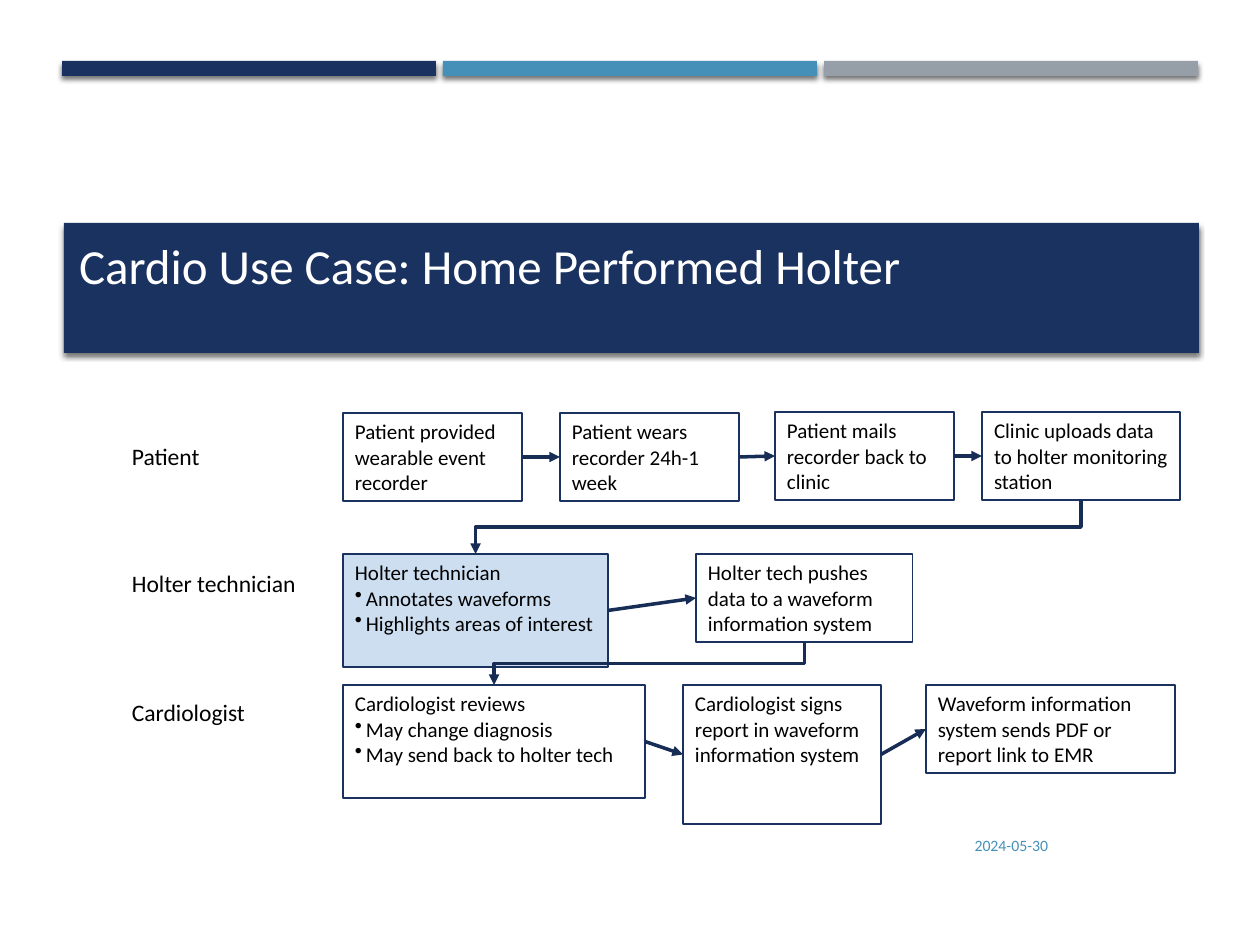
"""Build the home Holter workflow slide."""
from itertools import pairwise
from lxml.etree import SubElement
from pptx import Presentation
from pptx.dml.color import RGBColor
from pptx.enum.shapes import MSO_CONNECTOR, MSO_SHAPE
from pptx.enum.text import MSO_ANCHOR, PP_ALIGN
from pptx.oxml.ns import qn
from pptx.util import Emu, Pt

HUES = {"navy": "1A3260", "blue": "4590B8", "gray": "969FA7", "pale": "CCDEF0",
        "arrow": "172D56", "black": "000000", "white": "FFFFFF"}
BARS = ["navy", "blue", "gray"]
TITLE = "Cardio Use Case: Home Performed Holter"
DATE = "2024-05-30"
ROWS = [
    ("Patient", (120, 436, 98, 40), [
        ((343, 413, 179, 88), None, ["Patient provided wearable event recorder"]),
        ((560, 413, 179, 88), None, ["Patient wears recorder 24h-1 week"]),
        ((775, 412, 179, 88), None, ["Patient mails recorder back to clinic"]),
        ((982, 412, 198, 88), None, ["Clinic uploads data to holter monitoring station"]),
    ]),
    ("Holter technician", (120, 563, 199, 40), [
        ((343, 554, 265, 113), "pale",
         ["Holter technician", "Annotates waveforms", "Highlights areas of interest"]),
        ((696, 554, 217, 88), None, ["Holter tech pushes data to a waveform information system"]),
    ]),
    ("Cardiologist", (120, 692, 149, 40), [
        ((343, 685, 302, 113), None,
         ["Cardiologist reviews", "May change diagnosis", "May send back to holter tech"]),
        ((683, 685, 198, 139), None, ["Cardiologist signs report in waveform information system"]),
        ((926, 685, 249, 88), None, ["Waveform information system sends PDF or report link to EMR"]),
    ]),
]
PAD = {"margin_left": 12, "margin_right": 12, "margin_top": 6, "margin_bottom": 6}
BARE = dict.fromkeys(PAD, 0)


def px(n):
    return Emu(round(n * 914400 / 126))


def hue(name):
    return RGBColor.from_string(HUES[name])


def put(obj, vals):
    for key, val in vals.items():
        setattr(obj, key, val)


def write(shape, lines, size, tint="black", pad=PAD, wrap=True,
          anchor=MSO_ANCHOR.TOP, align=PP_ALIGN.LEFT):
    frame = shape.text_frame
    put(frame, {key: px(val) for key, val in pad.items()})
    put(frame, {"word_wrap": wrap, "vertical_anchor": anchor})
    for i, line in enumerate(lines):
        para = frame.add_paragraph() if i else frame.paragraphs[0]
        para.text = line
        para.alignment = align
        if i:
            props = para._p.get_or_add_pPr()
            props.set("marL", str(px(11)))
            props.set("indent", str(px(-11)))
            SubElement(props, qn("a:buChar"), char="•")
        font = para.runs[0].font
        put(font, {"name": "Calibri", "size": Pt(size)})
        font.color.rgb = hue(tint)


def text(area, line, size, **form):
    write(slide.shapes.add_textbox(*map(px, area)), [line], size, **form)


def rect(area, fill=None):
    shape = slide.shapes.add_shape(MSO_SHAPE.RECTANGLE, *map(px, area))
    shape.shadow.inherit = False
    if fill:
        shape.fill.solid()
        shape.fill.fore_color.rgb = hue(fill)
    else:
        shape.fill.background()
    return shape


def band(area, fill):
    shape = rect(area, fill)
    shape.line.fill.background()
    glow = SubElement(shape._element.spPr.find(qn("a:effectLst")), qn("a:outerShdw"),
                      blurRad=str(Pt(3)), dist=str(Pt(2)), dir="5400000",
                      algn="ctr", rotWithShape="0")
    tone = SubElement(glow, qn("a:srgbClr"), val=HUES["black"])
    SubElement(tone, qn("a:alpha"), val="55000")


def step(area, fill, lines):
    shape = rect(area, fill)
    shape.line.color.rgb = hue("navy")
    shape.line.width = Pt(0)
    write(shape, lines, 12)
    return shape


def arrow(kind, ends):
    link = slide.shapes.add_connector(kind, *map(Emu, ends))
    link.line.color.rgb = hue("arrow")
    link.line.width = Pt(0)
    SubElement(link.line._get_or_add_ln(), qn("a:tailEnd"), type="triangle")
    SubElement(link._element.spPr, qn("a:effectLst"))
    return link


def across(a, b):
    link = arrow(MSO_CONNECTOR.STRAIGHT, (0, 0, 0, 0))
    link.begin_connect(a, 3)
    link.end_connect(b, 1)


def down(a, b):
    x1, y1 = a.left + a.width // 2, a.top + a.height
    x2, y2 = b.left + b.width // 2, b.top
    wide, high = x1 - x2, y2 - y1
    left, top = (x1 + x2 - high) // 2, (y1 + y2 - wide) // 2
    link = arrow(MSO_CONNECTOR.ELBOW, (left, top, left + high, top + wide))
    link._element.spPr.find(qn("a:xfrm")).set("rot", "5400000")


deck = Presentation()
put(deck, {"slide_width": px(1260), "slide_height": px(945)})
slide = deck.slides.add_slide(deck.slide_layouts[6])

for i, fill in enumerate(BARS):
    band((62 + 381 * i, 61, 374, 15), fill)
band((64, 223, 1135, 130), "navy")
text((79, 179, 1101, 115), TITLE, 28, tint="white", pad=BARE, anchor=MSO_ANCHOR.BOTTOM)

lanes = []
for label, area, steps in ROWS:
    text(area, label, 13.5, wrap=False)
    lanes.append([step(*item) for item in steps])
for lane in lanes:
    for a, b in pairwise(lane):
        across(a, b)
for a, b in pairwise(lanes):
    down(a[-1], b[0])
text((766, 820, 294, 50), DATE, 9, tint="blue",
     anchor=MSO_ANCHOR.MIDDLE, align=PP_ALIGN.RIGHT)

deck.save("out.pptx")
